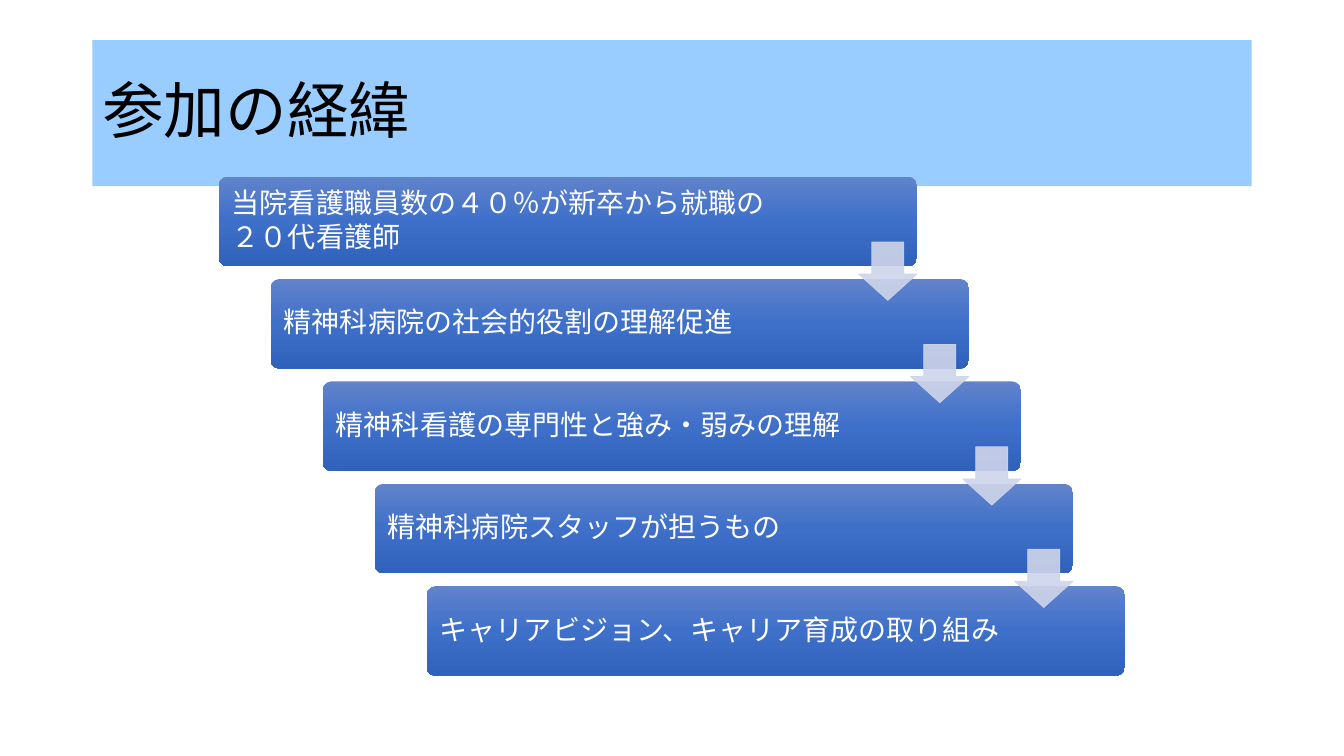
import copy
import pptx
import pptx.dml.color
import pptx.enum.shapes
import pptx.enum.text
import pptx.oxml.ns
import pptx.util

Cm, Pt = pptx.util.Cm, pptx.util.Pt
qn = pptx.oxml.ns.qn
Shape = pptx.enum.shapes.MSO_SHAPE
FONT = "Noto Sans CJK JP"


def paint(color, code):
    color.rgb = pptx.dml.color.RGBColor.from_string(code)


def write(shape, text, size, color, after=0, inset=0.25):
    frame = shape.text_frame
    frame.text = text
    frame.word_wrap = True
    frame.auto_size = pptx.enum.text.MSO_AUTO_SIZE.NONE
    frame.vertical_anchor = pptx.enum.text.MSO_ANCHOR.MIDDLE
    frame.margin_left = frame.margin_right = Cm(inset)
    frame.margin_top = frame.margin_bottom = Cm(0.13)
    for para in frame.paragraphs:
        para.alignment = pptx.enum.text.PP_ALIGN.LEFT
        para.line_spacing = 0.9
        para.space_after = Pt(after)
        for run in para.runs:
            run.font.name = FONT
            run.font.size = Pt(size)
            paint(run.font.color, color)
            east = run.font._element.makeelement(qn("a:ea"), {"typeface": FONT})
            run.font._element.find(qn("a:latin")).addnext(east)


deck = pptx.Presentation()
deck.slide_width, deck.slide_height = Cm(33.87), Cm(19.05)
slide = deck.slides.add_slide(deck.slide_layouts[5])

# Title band
title = slide.shapes.title
title.left, title.top = Cm(2.33), Cm(1.01)
title.width, title.height = Cm(29.21), Cm(3.68)
title.fill.solid()
paint(title.fill.fore_color, "99CCFF")
write(title, "参加の経緯", size=44, color="000000")

# Staircase of steps
steps = [
    "当院看護職員数の４０％が新卒から就職の\n２０代看護師",
    "精神科病院の社会的役割の理解促進",
    "精神科看護の専門性と強み・弱みの理解",
    "精神科病院スタッフが担うもの",
    "キャリアビジョン、キャリア育成の取り組み",
]
shades = [(0, "6183CB"), (0.5, "3E70CA"), (1, "3062BB")]
right, down = 1.31, 2.58
for row, text in enumerate(steps):
    card = slide.shapes.add_shape(
        Shape.ROUNDED_RECTANGLE,
        Cm(5.51 + row * right), Cm(4.45 + row * down), Cm(17.6), Cm(2.26))
    card.adjustments[0] = 0.1
    card.shadow.inherit = False
    card.line.fill.background()
    card.fill.gradient()
    card.fill.gradient_angle = 270
    # The default gradient has two stops; add a third
    stops = card._element.spPr.find(qn("a:gradFill")).find(qn("a:gsLst"))
    stops.append(copy.deepcopy(stops[0]))
    for stop, (place, shade) in zip(card.fill.gradient_stops, shades):
        stop.position = place
        paint(stop.color, shade)
    write(card, text, size=20, color="FFFFFF", after=2.5, inset=0.27)

# Arrows between steps, slightly see-through
for row in range(len(steps) - 1):
    arrow = slide.shapes.add_shape(
        Shape.DOWN_ARROW,
        Cm(21.64 + row * right), Cm(6.1 + row * down), Cm(1.47), Cm(1.47))
    arrow.adjustments[0], arrow.adjustments[1] = 0.55, 0.45
    arrow.shadow.inherit = False
    arrow.line.width = Pt(0.5)
    for fill in (arrow.fill, arrow.line.fill):
        fill.solid()
        paint(fill.fore_color, "CFD5EA")
    for code in arrow._element.spPr.iter(qn("a:srgbClr")):
        code.append(code.makeelement(qn("a:alpha"), {"val": "90000"}))

deck.save("out.pptx")
